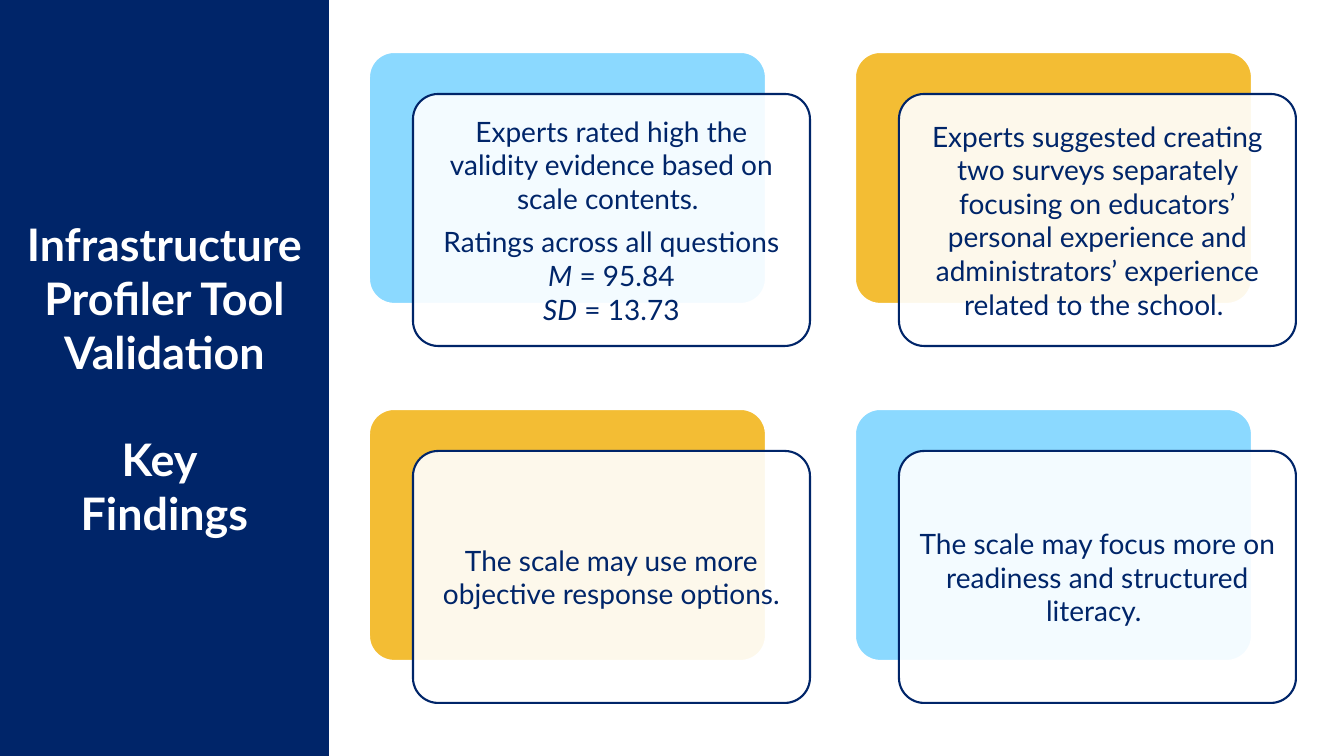
from lxml import etree
from pptx import Presentation
from pptx.dml.color import RGBColor
from pptx.enum.shapes import MSO_SHAPE
from pptx.enum.text import MSO_ANCHOR, MSO_AUTO_SIZE, PP_ALIGN
from pptx.oxml.ns import qn
from pptx.util import Emu, Pt

ROUNDED = MSO_SHAPE.ROUNDED_RECTANGLE
MIDDLE = MSO_ANCHOR.MIDDLE
NO_FIT = MSO_AUTO_SIZE.NONE
CENTER = PP_ALIGN.CENTER

NAVY, WHITE, SKY, GOLD = "002569", "FFFFFF", "6ED0FF", "F1AD02"
SLIDE_WIDTH, SLIDE_HEIGHT = 1344, 756
PANEL_WIDTH = 329
CARD_WIDTH, CARD_HEIGHT = 397, 252
GRID_LEFT, GRID_TOP = 369, 52
COLUMN_STEP, ROW_STEP = 486, 357
FRONT_RIGHT, FRONT_DOWN = 44, 42

TITLE = [
    ("Infrastructure Profiler Tool Validation", 0),
    ("Key ", 38.4),
    ("Findings", 0),
]
FINDINGS = [
    (SKY, [
        ("Experts rated high the validity evidence based on scale contents. ", 0),
        ("Ratings across all questions\n*M* = 95.84", 7),
        ("*SD* = 13.73", 0),
    ]),
    (GOLD, [
        ("Experts suggested creating two surveys separately focusing on "
         "educators’ personal experience and administrators’ experience "
         "related to the school. ", 0),
    ]),
    (GOLD, [("The scale may use more objective response options.", 0)]),
    (SKY, [("The scale may focus more on readiness and structured literacy. ", 0)]),
]


def px(value):
    return Emu(round(value * 914400 / 100.8))


def color(value):
    return RGBColor.from_string(value)


def write(paragraph, text, size=20, fill=NAVY, bold=False, before=0):
    paragraph.alignment = CENTER
    paragraph.space_before = Pt(before)
    for line_index, line in enumerate(text.split("\n")):
        if line_index:
            paragraph.add_line_break()
        for part_index, part in enumerate(line.split("*")):
            if part:
                run = paragraph.add_run()
                run.text = part
                run.font.name = "Lato"
                run.font.size = Pt(size)
                run.font.bold = bold
                run.font.italic = part_index % 2 == 1
                run.font.color.rgb = color(fill)


class SlideBuilder:
    def __init__(self, presentation):
        self.slide = presentation.slides.add_slide(presentation.slide_layouts[5])

    def fill_text(self, shape, paragraphs, inset, **style):
        frame = shape.text_frame
        frame.word_wrap = True
        frame.auto_size = NO_FIT
        frame.vertical_anchor = MIDDLE
        frame.margin_left = frame.margin_right = px(inset)
        frame.margin_top = frame.margin_bottom = px(inset)
        for index, (text, before) in enumerate(paragraphs):
            paragraph = frame.add_paragraph() if index else frame.paragraphs[0]
            write(paragraph, text, before=before, **style)

    def title_panel(self, paragraphs):
        title = self.slide.shapes.title
        title.left, title.top = px(0), px(0)
        title.width, title.height = px(PANEL_WIDTH), px(SLIDE_HEIGHT)
        title.fill.solid()
        title.fill.fore_color.rgb = color(NAVY)
        self.fill_text(title, paragraphs, 10, size=32, fill=WHITE, bold=True)

    def rounded(self, left, top, fill, opacity, line):
        shape = self.slide.shapes.add_shape(
            ROUNDED, px(left), px(top), px(CARD_WIDTH), px(CARD_HEIGHT))
        shape.adjustments[0] = 0.1
        shape.shadow.inherit = False
        shape.fill.solid()
        shape.fill.fore_color.rgb = color(fill)
        fill_color = shape.fill._xPr.find(qn("a:solidFill"))[0]
        etree.SubElement(fill_color, qn("a:alpha")).set("val", str(opacity * 1000))
        shape.line.color.rgb = color(line)
        shape.line.width = Pt(1.5)
        return shape

    def card(self, left, top, accent, paragraphs):
        self.rounded(left, top, accent, 80, WHITE)
        front = self.rounded(left + FRONT_RIGHT, top + FRONT_DOWN, WHITE, 90, NAVY)
        self.fill_text(front, paragraphs, 8)


def main():
    presentation = Presentation()
    presentation.slide_width = px(SLIDE_WIDTH)
    presentation.slide_height = px(SLIDE_HEIGHT)
    builder = SlideBuilder(presentation)
    builder.title_panel(TITLE)
    for index, (accent, paragraphs) in enumerate(FINDINGS):
        row, column = divmod(index, 2)
        builder.card(GRID_LEFT + column * COLUMN_STEP,
                     GRID_TOP + row * ROW_STEP, accent, paragraphs)
    presentation.save("out.pptx")


if __name__ == "__main__":
    main()
